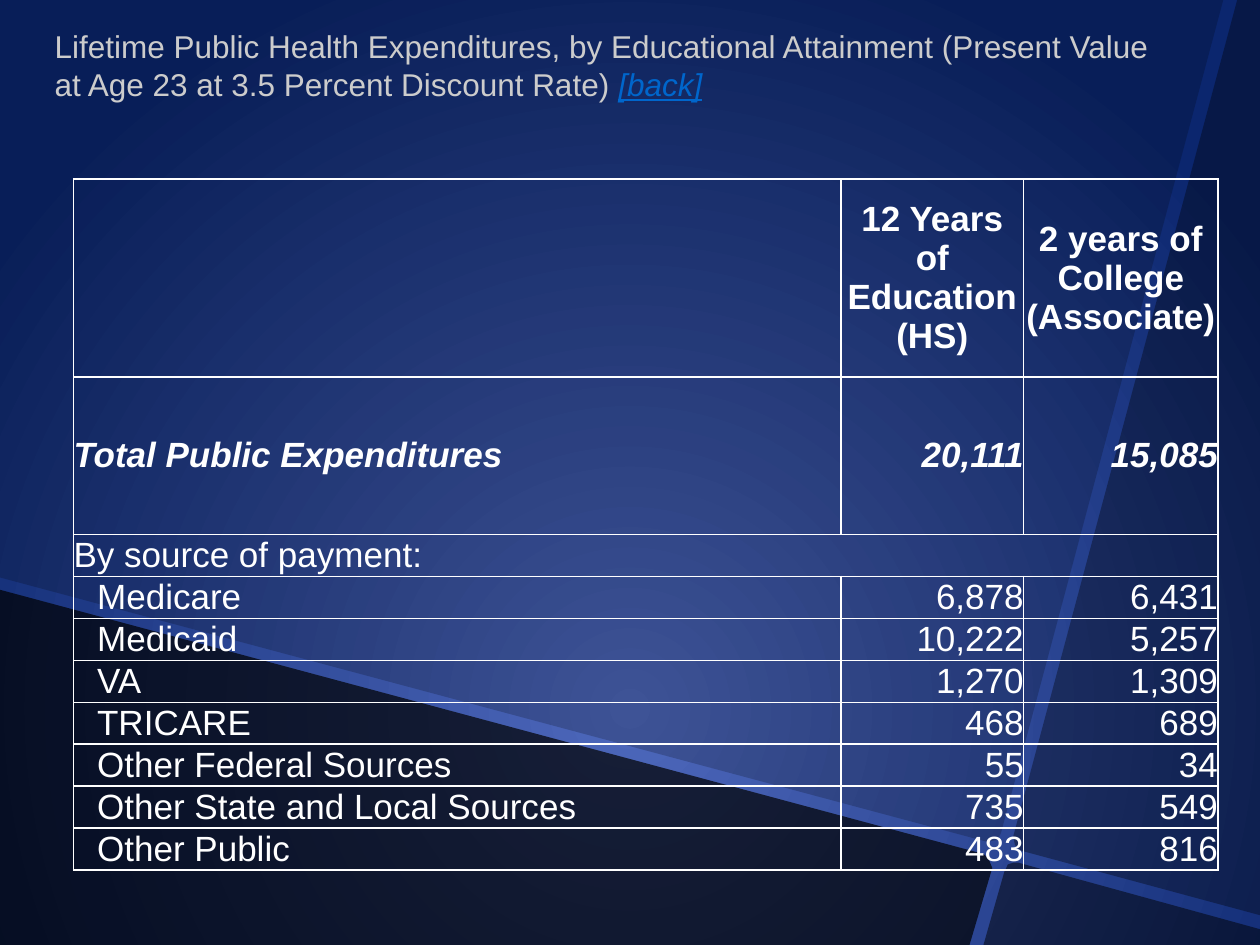
import pptx
import pptx.dml.color
import pptx.enum.text
import pptx.oxml
import pptx.oxml.ns
import pptx.util

WHITE = pptx.dml.color.RGBColor(0xFF, 0xFF, 0xFF)
BLACK = pptx.dml.color.RGBColor(0x00, 0x00, 0x00)
LINK_BLUE = pptx.dml.color.RGBColor(0x00, 0x80, 0xFF)
GLOW_BLUE = pptx.dml.color.RGBColor(0x4E, 0x68, 0xBC)
DEEP_BLUE = pptx.dml.color.RGBColor(0x0B, 0x26, 0x6E)

FONT = "Arial"
ALIGN = pptx.enum.text.PP_ALIGN
ANCHOR = pptx.enum.text.MSO_ANCHOR

PAGE_BOX = (0, 0, 720, 540)
TITLE_BOX = (24, 12, 654, 51)
TABLE_BOX = (42, 102.2, 654, 395.2)

PANELS = [
    (20, [(0, 0), (699, 0), (571.7, 476), (570, 480), (563.8, 481), (0, 330)]),
    (70, [(0, 337), (561.6, 488.2), (565, 491), (566.6, 496), (554.4, 540), (0, 540)]),
    (50, [(574, 498), (576, 494.5), (579, 493), (582, 493), (720, 530.6), (720, 540), (562.3, 540)]),
    (35, [(707, 0), (720, 0), (720, 522.7), (583, 486), (580, 483), (579, 478)]),
]

HEADINGS = ["12 Years of Education (HS)", "2 years of College (Associate)"]
TOTAL = ("Total Public Expenditures", "20,111", "15,085")
SECTION = "By source of payment:"
SOURCES = [
    ("Medicare", "6,878", "6,431"),
    ("Medicaid", "10,222", "5,257"),
    ("VA", "1,270", "1,309"),
    ("TRICARE", "468", "689"),
    ("Other Federal Sources", "55", "34"),
    ("Other State and Local Sources", "735", "549"),
    ("Other Public", "483", "816"),
]


def to_points(box):
    """Turn a box of plain numbers into Pt lengths."""
    return [pptx.util.Pt(value) for value in box]


def add_span(para, text, size, color=WHITE, bold=False, italic=False, underline=False):
    """Append one formatted run to a paragraph."""
    span = para.add_run()
    span.text = text
    font = span.font
    font.name, font.size = FONT, pptx.util.Pt(size)
    font.bold, font.italic, font.underline = bold, italic, underline
    font.color.rgb = color


def fill_background(page):
    """Give the page a round glow centred in its lower half."""
    fill = page.background.fill
    fill.gradient()
    for stop, color in zip(fill.gradient_stops, (GLOW_BLUE, DEEP_BLUE)):
        stop.color.rgb = color
    gradient = page.element.find(".//" + pptx.oxml.ns.qn("a:gradFill"))
    linear = gradient.find(pptx.oxml.ns.qn("a:lin"))
    gradient.replace(linear, pptx.oxml.parse_xml(
        f'<a:path {pptx.oxml.ns.nsdecls("a")} path="circle">'
        '<a:fillToRect l="50000" t="50000" r="50000"/></a:path>'))


def add_panels(page, box):
    """Draw the translucent dark panels that leave bright bands between them."""
    left, top = box[:2]
    for opacity, corners in PANELS:
        points = [(left + x, top + y) for x, y in corners]
        builder = page.shapes.build_freeform(*points[0], scale=pptx.util.Pt(1))
        builder.add_line_segments(points[1:], close=True)
        panel = builder.convert_to_shape()
        panel.shadow.inherit = False
        panel.line.fill.background()
        panel.fill.solid()
        panel.fill.fore_color.rgb = BLACK
        color = panel.element.spPr.find(".//" + pptx.oxml.ns.qn("a:srgbClr"))
        color.append(pptx.oxml.parse_xml(
            f'<a:alpha {pptx.oxml.ns.nsdecls("a")} val="{opacity * 1000}"/>'))


def add_title(page, box):
    """Place the title with its back mark."""
    title = page.shapes.title
    title.left, title.top, title.width, title.height = to_points(box)
    frame = title.text_frame
    frame.word_wrap = True
    frame.auto_size = pptx.enum.text.MSO_AUTO_SIZE.NONE
    frame.vertical_anchor = ANCHOR.TOP
    para = frame.paragraphs[0]
    para.alignment = ALIGN.LEFT
    add_span(para, "Lifetime Public Health Expenditures, by Educational Attainment "
             "(Present Value at Age 23 at 3.5 Percent Discount Rate) ", 18)
    add_span(para, "[back]", 18, LINK_BLUE, italic=True, underline=True)


def style_cell(cell):
    """Clear a cell's fill and margins and draw its white borders."""
    cell.fill.background()
    cell.vertical_anchor = ANCHOR.MIDDLE
    cell.margin_left = cell.margin_right = cell.margin_top = cell.margin_bottom = 0
    properties = cell._tc.get_or_add_tcPr()
    for position, side in enumerate("LRTB"):
        properties.insert(position, pptx.oxml.parse_xml(
            f'<a:ln{side} {pptx.oxml.ns.nsdecls("a")} w="{pptx.util.Pt(1)}">'
            f'<a:solidFill><a:srgbClr val="{WHITE}"/></a:solidFill></a:ln{side}>'))


def write_cell(cell, text, alignment, indent=0, **style):
    """Write one line of text into a cell."""
    cell.margin_left = pptx.util.Pt(indent)
    para = cell.text_frame.paragraphs[0]
    para.alignment = alignment
    add_span(para, text, 20, **style)


def write_row(table, row, texts, **style):
    """Write a label and its right-aligned amounts."""
    label, *amounts = texts
    indent = style.pop("indent", 0)
    write_cell(table.cell(row, 0), label, ALIGN.LEFT, indent, **style)
    for column, amount in enumerate(amounts, 1):
        write_cell(table.cell(row, column), amount, ALIGN.RIGHT, **style)


def add_expenditure_table(page, box):
    """Build the table of expenditures by source of payment."""
    width, height = box[2:]
    column_widths = [width - 104.5 - 111, 104.5, 111]
    source_height = 24
    row_count = len(SOURCES) + 3
    total_height = 90
    header_height = height - total_height - source_height * (row_count - 2)
    row_heights = [header_height, total_height] + [source_height] * (row_count - 2)

    table = page.shapes.add_table(row_count, 3, *to_points(box)).table
    table.first_row = table.horz_banding = False
    for column, column_width in zip(table.columns, column_widths):
        column.width = pptx.util.Pt(column_width)
    for row, row_height in zip(table.rows, row_heights):
        row.height = pptx.util.Pt(row_height)
    for cell in table.iter_cells():
        style_cell(cell)

    for column, heading in enumerate(HEADINGS, 1):
        write_cell(table.cell(0, column), heading, ALIGN.CENTER, bold=True)
    write_row(table, 1, TOTAL, bold=True, italic=True)
    table.cell(2, 0).merge(table.cell(2, 2))
    write_row(table, 2, [SECTION])
    for row, source in enumerate(SOURCES, 3):
        write_row(table, row, source, indent=13.5)


def main():
    """Build and save the one-page deck."""
    deck = pptx.Presentation()
    deck.slide_width, deck.slide_height = to_points(PAGE_BOX[2:])
    page = deck.slides.add_slide(deck.slide_layouts.get_by_name("Title Only"))
    fill_background(page)
    add_panels(page, PAGE_BOX)
    add_title(page, TITLE_BOX)
    add_expenditure_table(page, TABLE_BOX)
    deck.save("out.pptx")


if __name__ == "__main__":
    main()
